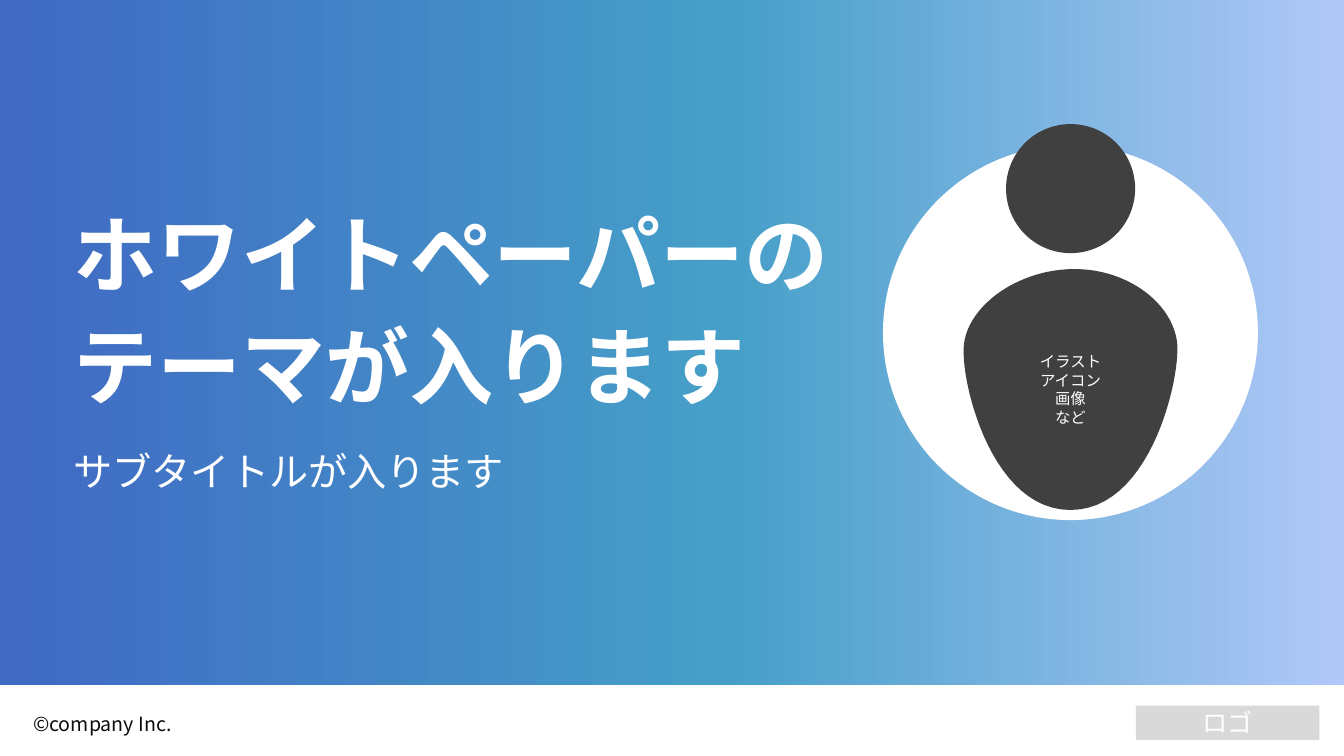
"""Build a white paper cover slide with a title, a figure and a footer."""
from dataclasses import dataclass

from lxml import etree
from pptx import Presentation
from pptx import util as u
from pptx.dml import color
from pptx.enum import shapes, text
from pptx.oxml import ns


@dataclass(frozen=True)
class Theme:
    """Colours, type sizes and font of the slide."""
    white: str = "FFFFFF"
    ink: str = "0D0D0D"
    dark: str = "404040"
    grey: str = "D9D9D9"
    fade: tuple = ((0, "4069C4"), (54, "459FC8"), (100, "B0C8F7"))
    title: int = 60
    sub: int = 28
    logo: int = 18
    foot: int = 14
    note: int = 11
    font: str = "Noto Sans CJK JP"
    lead: float = 1.2


@dataclass(frozen=True)
class Box:
    """Place of an element in points."""
    x: float
    y: float
    w: float
    h: float

    def size(self) -> list:
        """Return the place as lengths."""
        return [u.Pt(n) for n in (self.x, self.y, self.w, self.h)]


@dataclass(frozen=True)
class Label:
    """A left-aligned text box."""
    box: Box
    lines: tuple
    size: int
    hue: str
    bold: bool = False
    top: float = 7.6


@dataclass(frozen=True)
class Form:
    """A filled preset shape."""
    kind: shapes.MSO_SHAPE
    box: Box
    hue: str


LOOK = Theme()
RECT, OVAL = shapes.MSO_SHAPE.RECTANGLE, shapes.MSO_SHAPE.OVAL
BACK = Form(RECT, Box(0, -0.6, 960, 490.2), LOOK.white)
LOGO = Form(RECT, Box(811.4, 504, 131, 24.5), LOOK.grey)
DISC = Form(OVAL, Box(630.7, 103.7, 267.8, 267.8), LOOK.white)
HEAD = Form(OVAL, Box(718.6, 88.6, 92.2, 92.2), LOOK.dark)
START = (767.5, 192.2)
CURVES = (
    ((809.3, 192.2), (841.7, 221), (841, 249.8)),
    ((841, 278.6), (819.4, 364.3), (764.6, 364.3)),
    ((709.9, 364.3), (687.6, 278.6), (688.3, 249.8)),
    ((688.3, 221), (725, 192.2), START),
)
LABELS = (
    Label(Box(16.6, 504.7, 139, 24.5), ("©company Inc.",), LOOK.foot, LOOK.ink, top=3.6),
    Label(Box(45.4, 136.8, 560.2, 160.6), ("ホワイトペーパーの", "テーマが入ります"),
          LOOK.title, LOOK.white, True),
    Label(Box(45.4, 311.8, 325.4, 41), ("サブタイトルが入ります",), LOOK.sub, LOOK.white),
)


def tint(hue: str) -> color.RGBColor:
    """Return a colour from its hex digits."""
    return color.RGBColor.from_string(hue)


def paint(shape, hue: str) -> None:
    """Fill a shape and drop its line and shadow."""
    shape.shadow.inherit = False
    shape.fill.solid()
    shape.fill.fore_color.rgb = tint(hue)
    shape.line.fill.background()


def draw(host, form: Form):
    """Add a preset shape."""
    shape = host.add_shape(form.kind, *form.box.size())
    paint(shape, form.hue)
    return shape


def blend(shape) -> None:
    """Give a shape the theme gradient from left to right."""
    shape.fill.gradient()
    shape.fill.gradient_angle = 0
    stops = shape._element.spPr.find(".//" + ns.qn("a:gsLst"))
    for old in list(stops):
        stops.remove(old)
    for pos, hue in LOOK.fade:
        stop = etree.SubElement(stops, ns.qn("a:gs"), pos=str(pos * 1000))
        etree.SubElement(stop, ns.qn("a:srgbClr"), val=hue)


def write(shape, lines: tuple, size: int, hue: str, bold: bool = False,
          align=text.PP_ALIGN.CENTER, **frame) -> None:
    """Set the lines of a shape, one paragraph each."""
    body = shape.text_frame
    base = dict(word_wrap=True, vertical_anchor=text.MSO_ANCHOR.MIDDLE,
                margin_top=0, margin_bottom=0)
    for key, val in {**base, **frame}.items():
        setattr(body, key, val)
    gap = 8 if align == text.PP_ALIGN.LEFT else 0
    for i, line in enumerate(lines):
        para = body.add_paragraph() if i else body.paragraphs[0]
        style = dict(alignment=align, line_spacing=u.Pt(size * LOOK.lead),
                     space_before=u.Pt(gap if i else 0), space_after=u.Pt(0))
        for key, val in style.items():
            setattr(para, key, val)
        run = para.add_run()
        run.text = line
        for key, val in dict(size=u.Pt(size), bold=bold, name=LOOK.font).items():
            setattr(run.font, key, val)
        run.font.color.rgb = tint(hue)
        etree.SubElement(run._r.get_or_add_rPr(), ns.qn("a:ea"), typeface=LOOK.font)


def trace(steps: int = 24) -> list:
    """Return points along the body outline."""
    dots, a = [], START
    for b, c, d in CURVES:
        for i in range(1, steps + 1):
            t = i / steps
            s = 1 - t
            dots.append(tuple(
                u.Pt(s**3 * p + 3 * s * s * t * q + 3 * s * t * t * r + t**3 * v)
                for p, q, r, v in zip(a, b, c, d)))
        a = d
    return dots


def figure(host) -> None:
    """Add the person made of a head and a body."""
    group = host.add_group_shape().shapes
    draw(group, HEAD)
    pen = group.build_freeform(*(u.Pt(n) for n in START))
    pen.add_line_segments(trace(), close=True)
    torso = pen.convert_to_shape()
    paint(torso, LOOK.dark)
    write(torso, ("イラスト", "アイコン", "画像", "など"), LOOK.note, LOOK.white)


def main() -> None:
    """Build and save the slide."""
    deck = Presentation()
    deck.slide_width, deck.slide_height = u.Pt(960), u.Pt(540)
    host = deck.slides.add_slide(deck.slide_layouts[6]).shapes
    blend(draw(host, BACK))
    write(draw(host, LOGO), ("ロゴ",), LOOK.logo, LOOK.white)
    draw(host, DISC)
    for item in LABELS:
        write(host.add_textbox(*item.box.size()), item.lines, item.size, item.hue,
              item.bold, text.PP_ALIGN.LEFT, margin_top=u.Pt(item.top),
              vertical_anchor=text.MSO_ANCHOR.TOP)
    figure(host)
    deck.save("out.pptx")


if __name__ == "__main__":
    main()
